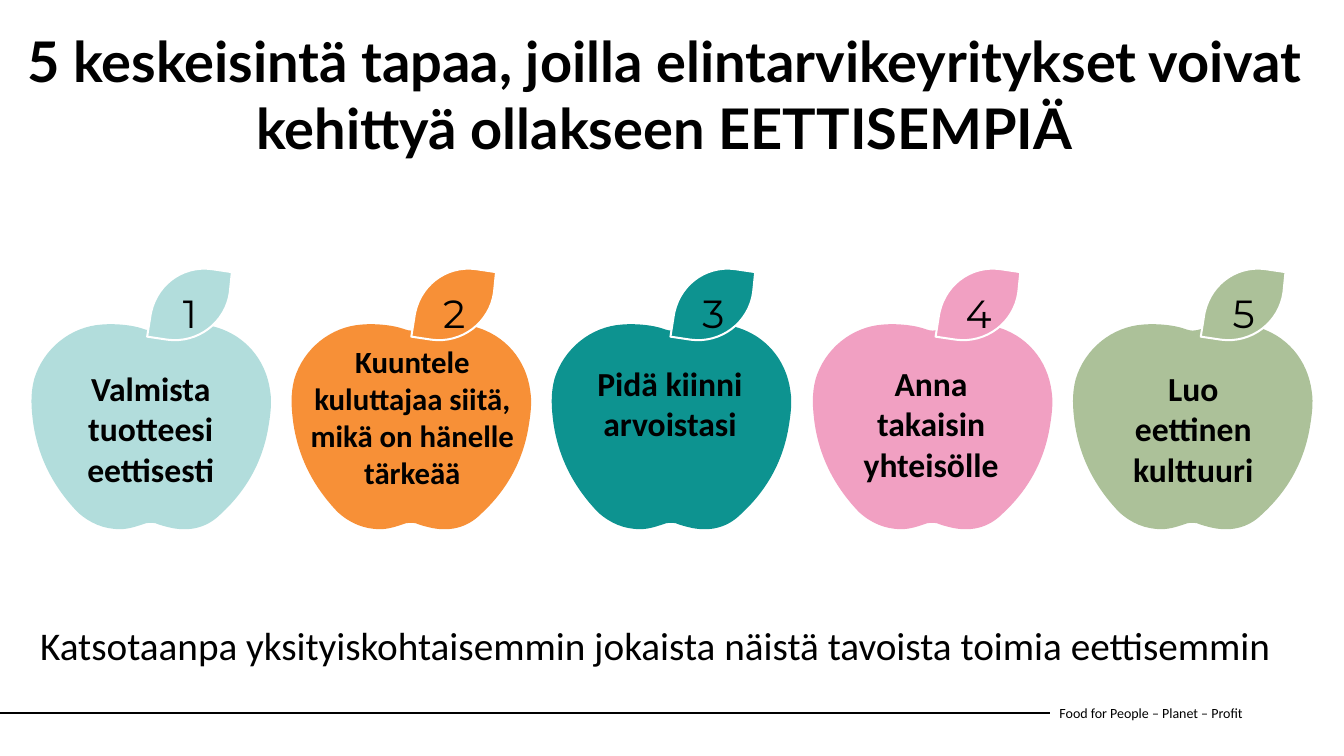
import pptx
import pptx.dml.color
import pptx.enum.shapes
import pptx.enum.text
import pptx.util
from lxml import etree

PX = 9144  # EMU per px, 100 px to the inch
COLORS = {"black": "000000", "white": "FFFFFF", "aqua": "B2DDDC", "orange": "F79037",
          "teal": "0D9390", "pink": "F1A0C2", "sage": "ACC199"}
ALIGN = pptx.enum.text.PP_ALIGN
ANCHOR = pptx.enum.text.MSO_ANCHOR

# Outlines: start point, then two numbers for a line or six for a cubic curve
APPLE = [(238, 68), (234, 37, 213, 12, 182, 4), (167, 0, 152, 1, 137, 4),
         (131, 5, 126, 8, 120, 8), (116, 8, 112, 6, 108, 5), (97, 2, 82, 1, 71, 2),
         (40, 4, 13, 26, 4, 56), (0, 71, 1, 85, 3, 100), (8, 134, 23, 163, 47, 188),
         (59, 199, 73, 205, 89, 205), (98, 205, 106, 202, 115, 199),
         (118, 199, 121, 198, 124, 199), (129, 201, 133, 202, 137, 203),
         (157, 208, 175, 204, 189, 190), (214, 167, 230, 139, 236, 105),
         (238, 93, 240, 80, 238, 68)]
LEAF = [(20, 74), (0, 71), (3, 52), (7, 21, 34, 0, 64, 4), (84, 7), (82, 27),
        (78, 57, 50, 78, 20, 74)]

# Colour, leaf x, label box (x, y, w, h) and label size; offsets are from the apple's corner
APPLES = [
    ("aqua", 116, (31, 40, 177, 131), 24, "Valmista tuotteesi eettisesti"),
    ("orange", 120, (8, 15, 226, 158), 22, "Kuuntele kuluttajaa siitä, mikä on hänelle tärkeää"),
    ("teal", 119, (30, 35, 177, 131), 24, "Pidä kiinni arvoistasi"),
    ("pink", 123, (20, 35, 197, 131), 24, "Anna takaisin yhteisölle"),
    ("sage", 128, (32, 40, 177, 131), 24, "Luo eettinen kulttuuri"),
]
APPLE_X, APPLE_Y, APPLE_PITCH = 30, 320, 258.25
LEAF_RISE = 57


def rgb(name):
    return pptx.dml.color.RGBColor.from_string(COLORS[name])


def add_text(s, text, box, size, font="Calibri", bold=False, align=ALIGN.LEFT, anchor=ANCHOR.TOP):
    tb = s.shapes.add_textbox(*(v * PX for v in box))
    tf = tb.text_frame
    tf.word_wrap = True
    tf.vertical_anchor = anchor
    p = tf.paragraphs[0]
    p.alignment = align
    r = p.add_run()
    r.text = text
    r.font.name = font
    r.font.size = pptx.util.Pt(size)
    r.font.bold = bold
    r.font.color.rgb = rgb("black")
    return tb


def bend_curves(sp, outline):
    """Gather the three points of each curved segment into one cubic curve."""
    lines = iter(sp._element.findall(".//" + pptx.oxml.ns.qn("a:lnTo")))
    for seg in outline[1:]:
        first = next(lines)
        if len(seg) == 6:
            first.tag = pptx.oxml.ns.qn("a:cubicBezTo")
            for _ in range(2):
                extra = next(lines)
                first.append(extra[0])
                extra.getparent().remove(extra)


def add_outline(s, outline, x, y, fill, line=None):
    points = [(x + seg[i], y + seg[i + 1]) for seg in outline for i in range(0, len(seg), 2)]
    fb = s.shapes.build_freeform(*points[0], scale=PX)
    fb.add_line_segments(points[1:], close=True)
    sp = fb.convert_to_shape()
    bend_curves(sp, outline)
    sp.shadow.inherit = False
    sp.fill.solid()
    sp.fill.fore_color.rgb = rgb(fill)
    if line:
        sp.line.color.rgb = rgb(line)
        sp.line.width = pptx.util.Pt(1.45)
    else:
        sp.line.fill.background()


def add_apple(s, x, y, number, color, leaf_dx, label_box, size, label):
    leaf_x, leaf_y = x + leaf_dx, y - LEAF_RISE
    add_outline(s, APPLE, x, y, color)
    add_outline(s, LEAF, leaf_x, leaf_y, color, line="white")
    add_text(s, str(number), (leaf_x + 5, leaf_y + 19, 75, 57), 28,
             font="Montserrat", align=ALIGN.CENTER)
    dx, dy, w, h = label_box
    add_text(s, label, (x + dx, y + dy, w, h), size, bold=True, align=ALIGN.CENTER)


def add_footer(s, x, y, w, h):
    tb = add_text(s, "Food for People – Planet – Profit", (x, y, w, h), 10, anchor=ANCHOR.MIDDLE)
    mid = (y + h // 2) * PX
    rule = s.shapes.add_connector(pptx.enum.shapes.MSO_CONNECTOR.STRAIGHT, 0, mid, x * PX, mid)
    rule.end_connect(tb, 1)
    rule.line.color.rgb = rgb("black")
    rule.line.width = pptx.util.Pt(1.5)
    etree.SubElement(rule._element.spPr, pptx.oxml.ns.qn("a:effectLst"))


def main():
    prs = pptx.Presentation()
    prs.slide_width, prs.slide_height = 1333 * PX, 750 * PX
    s = prs.slides.add_slide(prs.slide_layouts[6])

    # Footer and title
    add_footer(s, 1041, 687, 273, 40)
    add_text(s, "5 keskeisintä tapaa, joilla elintarvikeyritykset voivat kehittyä ollakseen EETTISEMPIÄ",
             (15, 21, 1288, 145), 40, font="Lato", bold=True, align=ALIGN.CENTER)

    # Row of numbered apples
    for i, apple in enumerate(APPLES):
        add_apple(s, round(APPLE_X + i * APPLE_PITCH), APPLE_Y, i + 1, *apple)

    # Closing sentence
    add_text(s, "Katsotaanpa yksityiskohtaisemmin jokaista näistä tavoista toimia eettisemmin",
             (30, 611, 1256, 57), 28)
    prs.save("out.pptx")


if __name__ == "__main__":
    main()
